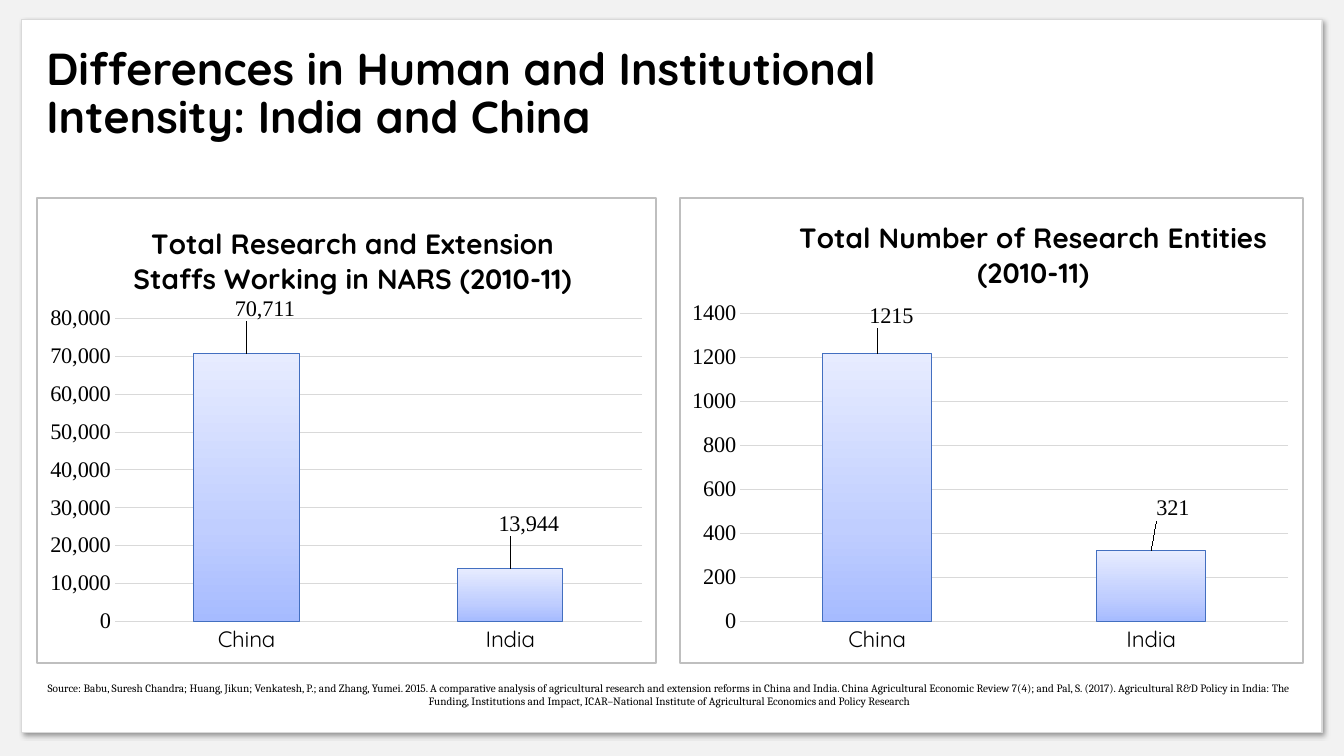
"""Build a slide comparing research staff and research entities in China and India."""
from copy import deepcopy

from lxml.etree import SubElement
from pptx import Presentation
from pptx.chart.data import CategoryChartData
from pptx.dml.color import RGBColor
from pptx.enum.chart import XL_CHART_TYPE, XL_LABEL_POSITION, XL_TICK_MARK
from pptx.enum.shapes import MSO_SHAPE
from pptx.enum.text import MSO_ANCHOR, PP_ALIGN
from pptx.oxml import parse_xml
from pptx.oxml.ns import nsdecls, qn
from pptx.util import Inches, Pt


def set_font(font, name, size, bold=False):
    font.name = name
    font.size = Pt(size)
    font.bold = bold
    font.color.rgb = RGBColor.from_string("000000")


def make_layout(inner=False, **fractions):
    layout = parse_xml(f"<c:layout {nsdecls('c')}><c:manualLayout/></c:layout>")
    if inner:
        SubElement(layout[0], qn("c:layoutTarget")).set("val", "inner")
    if "w" in fractions or inner is None:
        for mode in ("xMode", "yMode"):
            SubElement(layout[0], qn(f"c:{mode}")).set("val", "edge")
    for key, value in fractions.items():
        SubElement(layout[0], qn(f"c:{key}")).set("val", str(value))
    return layout


presentation = Presentation()
presentation.slide_width = Inches(13.33)
presentation.slide_height = Inches(7.5)
slide = presentation.slides.add_slide(presentation.slide_layouts[5])
slide.background.fill.solid()
slide.background.fill.fore_color.rgb = RGBColor.from_string("F2F2F2")

title = slide.shapes.title
title.left, title.top = Inches(0.36), Inches(0.22)
title.width, title.height = Inches(12.43), Inches(1.45)
title.text_frame.text = "Differences in Human and Institutional \vIntensity: India and China"
title.text_frame.vertical_anchor = MSO_ANCHOR.MIDDLE
paragraph = title.text_frame.paragraphs[0]
paragraph.alignment = PP_ALIGN.LEFT
paragraph.line_spacing = 0.9
set_font(paragraph.font, "Quicksand", 32, True)

panel = slide.shapes.add_shape(
    MSO_SHAPE.RECTANGLE, Inches(0.21), Inches(0.19), Inches(12.9), Inches(7.07))
panel.fill.solid()
panel.fill.fore_color.rgb = RGBColor.from_string("FFFFFF")
panel.line.color.rgb = RGBColor.from_string("D9D9D9")
panel.line.width = Pt(0.25)
panel.shadow.inherit = False
effects = panel.element.spPr.find(qn("a:effectLst"))
effects.append(parse_xml(
    f'<a:outerShdw {nsdecls("a")} blurRad="50800" dist="38100" dir="2700000">'
    '<a:srgbClr val="000000"><a:alpha val="40000"/></a:srgbClr></a:outerShdw>'))
title.element.addprevious(panel.element)

charts = [
    {"left": 0.36, "width": 6.16, "values": (70711, 13944), "format": "#,##0",
     "title": "Total Research and Extension\nStaffs Working in NARS (2010-11)",
     "title_at": {"x": 0.15, "y": 0.05}, "maximum": 80000, "step": 10000,
     "plot": {"x": 0.125, "y": 0.26, "w": 0.852, "h": 0.65},
     "label_offsets": [(0.03, -0.06), (0.03, -0.06)]},
    {"left": 6.73, "width": 6.2, "values": (1215, 321), "format": "General",
     "title": "Total Number of Research Entities\n(2010-11)",
     "title_at": {"x": 0.187, "y": 0.037}, "maximum": 1400, "step": 200,
     "plot": {"x": 0.097, "y": 0.248, "w": 0.88, "h": 0.662},
     "label_offsets": [(0.023, -0.045), (0.035, -0.055)]},
]
for details in charts:
    data = CategoryChartData(number_format=details["format"])
    data.categories = ["China", "India"]
    data.add_series("Series 1", details["values"])
    chart = slide.shapes.add_chart(
        XL_CHART_TYPE.COLUMN_CLUSTERED, Inches(details["left"]), Inches(1.95),
        Inches(details["width"]), Inches(4.64), data).chart
    set_font(chart.font, "Times New Roman", 16)
    chart.has_legend = False

    chart.has_title = True
    chart.chart_title.text_frame.text = details["title"]
    for paragraph in chart.chart_title.text_frame.paragraphs:
        paragraph.alignment = PP_ALIGN.CENTER
        set_font(paragraph.font, "Quicksand", 20, True)
    chart.chart_title.include_in_layout = False
    title_element = chart.chart_title.element
    for layout in title_element.findall(qn("c:layout")):
        title_element.remove(layout)
    title_element.find(qn("c:tx")).addnext(make_layout(None, **details["title_at"]))

    for axis, font_name in ((chart.category_axis, "Quicksand"),
                            (chart.value_axis, "Times New Roman")):
        axis.major_tick_mark = axis.minor_tick_mark = XL_TICK_MARK.NONE
        axis.format.line.fill.background()
        set_font(axis.tick_labels.font, font_name, 16)
    axis = chart.value_axis
    axis.minimum_scale, axis.maximum_scale = 0, details["maximum"]
    axis.major_unit = details["step"]
    axis.tick_labels.number_format = details["format"]
    axis.tick_labels.number_format_is_linked = False
    axis.major_gridlines.format.line.color.rgb = RGBColor.from_string("D9D9D9")
    axis.major_gridlines.format.line.width = Pt(0.75)

    plot = chart.plots[0]
    plot.gap_width = 150
    plot.vary_by_categories = False
    series = plot.series[0]
    series.format.line.color.rgb = RGBColor.from_string("436FC0")
    series.format.line.width = Pt(0.75)
    fill = series.format.fill
    fill.gradient()
    fill.gradient_angle = 90
    first_stop = next(chart.element.iter(qn("a:gs")))
    first_stop.addnext(deepcopy(first_stop))
    gradient = ((0, "A6BBFF"), (0.35, "C0CEFF"), (1, "E7ECFF"))
    for stop, (position, color) in zip(fill.gradient_stops, gradient):
        stop.position = position
        stop.color.rgb = RGBColor.from_string(color)

    labels = series.data_labels
    labels.show_value = True
    labels.number_format = details["format"]
    labels.number_format_is_linked = False
    labels.position = XL_LABEL_POSITION.OUTSIDE_END
    set_font(labels.font, "Times New Roman", 16)
    for index in range(len(details["values"])):
        label = series.points[index].data_label
        set_font(label.font, "Times New Roman", 16)
        label.position = XL_LABEL_POSITION.OUTSIDE_END
    for element, (x, y) in zip(chart.element.iter(qn("c:dLbl")), details["label_offsets"]):
        element.find(qn("c:idx")).addnext(make_layout(x=x, y=y))

    plot_area = chart.element.find(qn("c:chart")).find(qn("c:plotArea"))
    for layout in plot_area.findall(qn("c:layout")):
        plot_area.remove(layout)
    plot_area.insert(0, make_layout(True, **details["plot"]))
    chart.element.find(qn("c:chart")).addnext(parse_xml(
        f'<c:spPr {nsdecls("c", "a")}><a:noFill/><a:ln w="19050"><a:solidFill>'
        '<a:srgbClr val="BFBFBF"/></a:solidFill></a:ln></c:spPr>'))

source = slide.shapes.add_textbox(Inches(0.36), Inches(6.71), Inches(12.57), Inches(0.37))
source.text_frame.word_wrap = True
source.text_frame.text = (
    "Source: Babu, Suresh Chandra; Huang, Jikun; Venkatesh, P.; and Zhang, Yumei. 2015. "
    "A comparative analysis of agricultural research and extension reforms in China and India. "
    "China Agricultural Economic Review 7(4); and Pal, S. (2017). Agricultural R&D Policy in "
    "India: The Funding, Institutions and Impact, ICAR–National Institute of Agricultural "
    "Economics and Policy Research")
paragraph = source.text_frame.paragraphs[0]
paragraph.alignment = PP_ALIGN.CENTER
set_font(paragraph.font, "Cambria", 8)

presentation.save("out.pptx")
